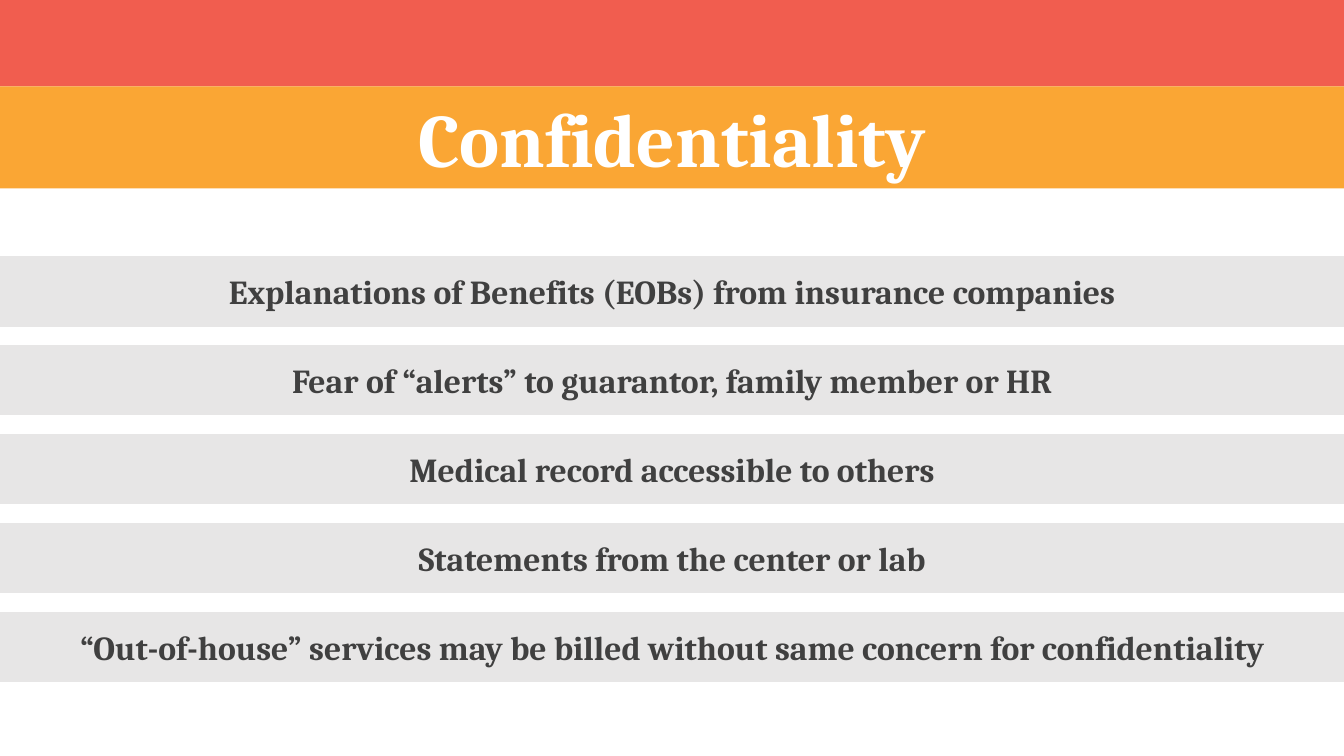
from dataclasses import dataclass

from pptx import Presentation
from pptx import util as u
from pptx.dml.color import RGBColor
from pptx.enum import shapes, text


@dataclass(frozen=True)
class Theme:
    font: str = "Cambria"
    coral: str = "F15D4F"
    orange: str = "FAA634"
    grey: str = "E7E6E6"
    white: str = "FFFFFF"
    dark: str = "404040"
    title_size: int = 54
    row_size: int = 24


def write_text(shape, content, *, font, size, color, anchor, bold=True):
    """Put one centred paragraph into a shape."""
    frame = shape.text_frame
    frame.word_wrap = True
    frame.vertical_anchor = anchor
    para = frame.paragraphs[0]
    para.alignment = text.PP_ALIGN.CENTER
    span = para.add_run()
    span.text = content
    span.font.name = font
    span.font.size = u.Pt(size)
    span.font.bold = bold
    span.font.color.rgb = RGBColor.from_string(color)


class SlideBuilder:
    def __init__(self, page, width, theme):
        self.page = page
        self.width = width
        self.theme = theme

    def band(self, top, height, fill, kind=shapes.MSO_SHAPE.RECTANGLE):
        """Add a full-width coloured band; top and height in cm."""
        box = self.page.shapes.add_shape(
            kind, 0, u.Cm(top), self.width, u.Cm(height))
        box.shadow.inherit = False
        box.fill.solid()
        box.fill.fore_color.rgb = RGBColor.from_string(fill)
        box.line.fill.background()
        return box

    def title(self, content, top, height):
        theme = self.theme
        box = self.band(top, height, theme.orange)
        write_text(box, content, font=theme.font, size=theme.title_size,
                   color=theme.white, anchor=text.MSO_ANCHOR.TOP)

    def row(self, content, top, height):
        theme = self.theme
        box = self.band(top, height, theme.grey,
                        shapes.MSO_SHAPE.FLOWCHART_PROCESS)
        write_text(box, content, font=theme.font, size=theme.row_size,
                   color=theme.dark, anchor=text.MSO_ANCHOR.MIDDLE)


CONCERNS = [
    "Explanations of Benefits (EOBs) from insurance companies",
    "Fear of “alerts” to guarantor, family member or HR",
    "Medical record accessible to others",
    "Statements from the center or lab",
    "“Out-of-house” services may be billed without same concern for confidentiality",
]
HEADER_HEIGHT = 2.18
TITLE_HEIGHT = 2.57
ROWS_TOP = 6.45
ROW_HEIGHT = 1.78
ROW_PITCH = 2.24


def main():
    deck = Presentation()
    deck.slide_width = u.Cm(33.87)
    deck.slide_height = u.Cm(19.05)
    page = deck.slides.add_slide(deck.slide_layouts[6])
    theme = Theme()
    builder = SlideBuilder(page, deck.slide_width, theme)

    # Header bands
    builder.band(0, HEADER_HEIGHT, theme.coral)
    builder.title("Confidentiality", HEADER_HEIGHT, TITLE_HEIGHT)

    # Evenly spaced concerns
    for index, concern in enumerate(CONCERNS):
        builder.row(concern, ROWS_TOP + index * ROW_PITCH, ROW_HEIGHT)

    deck.save("out.pptx")


if __name__ == "__main__":
    main()
